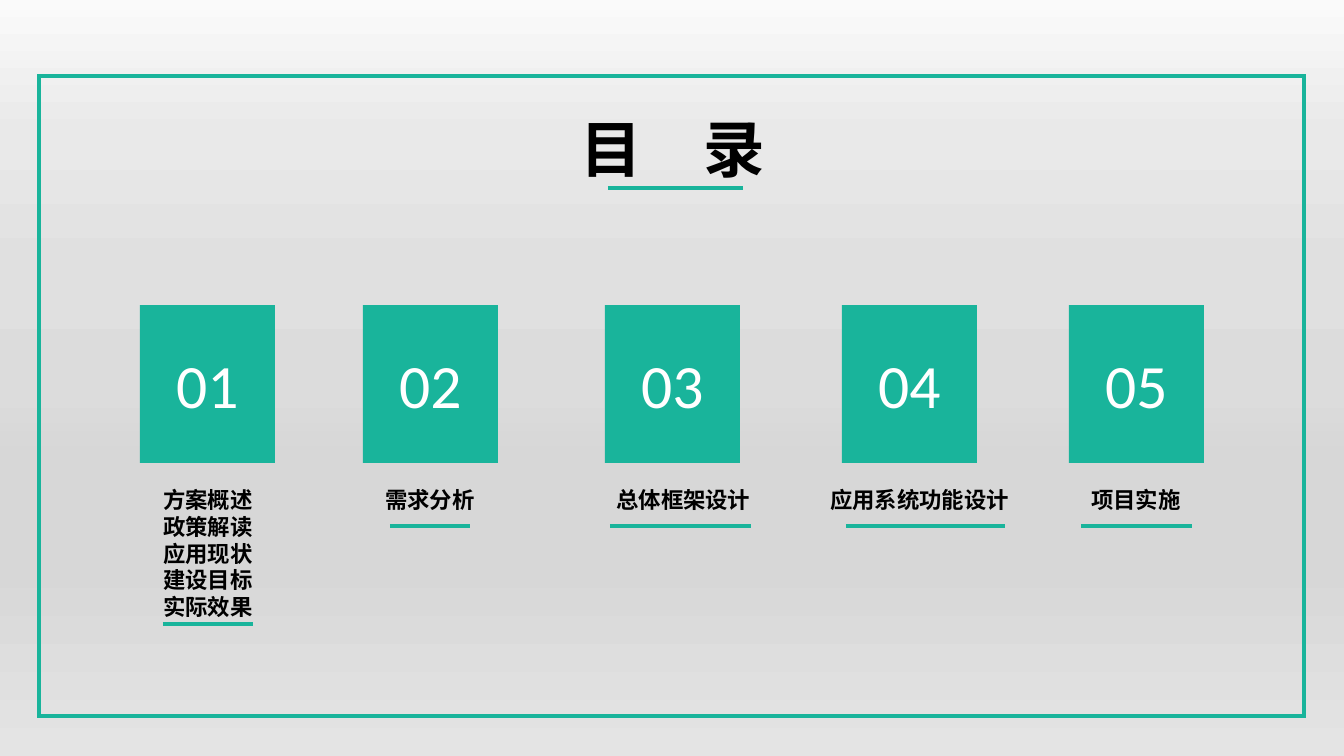
from pptx import Presentation
from pptx.dml.color import RGBColor
from pptx.enum.shapes import MSO_CONNECTOR, MSO_SHAPE
from pptx.enum.text import MSO_ANCHOR, MSO_AUTO_SIZE, PP_ALIGN
from pptx.oxml.ns import qn
from pptx.util import Pt
from lxml.etree import SubElement

EMU_PER_INCH = 914400
PX_PER_INCH = 100.8
FONT = "Calibri"
TEAL = RGBColor(0x19, 0xB4, 0x9B)
WHITE = RGBColor(0xFF, 0xFF, 0xFF)
BLACK = RGBColor(0x00, 0x00, 0x00)

BACKDROP = [
    (0, RGBColor(0xFA, 0xFA, 0xFA)),
    (18, RGBColor(0xE9, 0xE9, 0xE9)),
    (36, RGBColor(0xE0, 0xE0, 0xE0)),
    (51, RGBColor(0xDC, 0xDC, 0xDC)),
    (54, RGBColor(0xDA, 0xDA, 0xDA)),
    (56, RGBColor(0xD9, 0xD9, 0xD9)),
    (57, RGBColor(0xD8, 0xD8, 0xD8)),
    (59, RGBColor(0xD7, 0xD7, 0xD7)),
    (74, RGBColor(0xD7, 0xD7, 0xD7)),
    (100, RGBColor(0xE4, 0xE4, 0xE4)),
]

CHAPTERS = [
    (140, (152, 112), (163, 253, 624),
     ["方案概述", "政策解读", "应用现状", "建设目标", "实际效果"]),
    (363, (374, 112), (390, 470, 526), ["需求分析"]),
    (605, (605, 157), (610, 751, 526), ["总体框架设计"]),
    (842, (818, 203), (846, 1005, 526), ["应用系统功能设计"]),
    (1069, (1080, 112), (1081, 1192, 526), ["项目实施"]),
]


def px(*lengths):
    return [round(length * EMU_PER_INCH / PX_PER_INCH) for length in lengths]


def paint_backdrop(slide):
    fill = slide.background.fill
    fill.gradient()
    fill.gradient_angle = 270
    stops = next(slide.element.iter(qn("a:gsLst")))
    stops.clear()
    for percent, color in BACKDROP:
        stop = SubElement(stops, qn("a:gs"), pos=str(percent * 1000))
        SubElement(stop, qn("a:srgbClr"), val=str(color))


def write(frame, lines, size, color, bold=False):
    frame.text = "\n".join(lines)
    for paragraph in frame.paragraphs:
        paragraph.alignment = PP_ALIGN.CENTER
        paragraph.font.name = FONT
        paragraph.font.size = Pt(size)
        paragraph.font.bold = bold
        paragraph.font.color.rgb = color


def add_rectangle(slide, left, top, width, height):
    rectangle = slide.shapes.add_shape(
        MSO_SHAPE.RECTANGLE, *px(left, top, width, height))
    rectangle.shadow.inherit = False
    return rectangle


def add_border(slide):
    border = add_rectangle(slide, 39, 76, 1265, 640)
    border.fill.background()
    border.line.color.rgb = TEAL
    border.line.width = Pt(3)
    outline = border.element.spPr.find(qn("a:ln"))
    SubElement(outline, qn("a:miter"), lim="800000")


def add_number_card(slide, left, number):
    card = add_rectangle(slide, left, 305, 135, 158)
    card.fill.solid()
    card.fill.fore_color.rgb = TEAL
    card.line.fill.background()
    card.text_frame.vertical_anchor = MSO_ANCHOR.MIDDLE
    write(card.text_frame, [f"{number:02d}"], 44, WHITE)


def add_heading(slide, left, top, width, height, lines, size):
    heading = slide.shapes.add_textbox(*px(left, top, width, height))
    frame = heading.text_frame
    frame.word_wrap = False
    frame.auto_size = MSO_AUTO_SIZE.SHAPE_TO_FIT_TEXT
    write(frame, lines, size, BLACK, bold=True)


def add_underline(slide, start, end, y):
    underline = slide.shapes.add_connector(
        MSO_CONNECTOR.STRAIGHT, *px(start, y, end, y))
    underline.line.color.rgb = TEAL
    underline.line.width = Pt(3)
    SubElement(underline.element.spPr, qn("a:effectLst"))


def main():
    deck = Presentation()
    deck.slide_width, deck.slide_height = px(1344, 756)
    slide = deck.slides.add_slide(deck.slide_layouts[6])
    paint_backdrop(slide)
    add_border(slide)
    add_heading(slide, 563, 106, 220, 85, ["目　录"], 44)
    add_underline(slide, 608, 743, 188)
    for number, chapter in enumerate(CHAPTERS, start=1):
        card_left, (left, width), underline, topics = chapter
        add_number_card(slide, card_left, number)
        add_heading(slide, left, 481, width, 10 + 27 * len(topics), topics, 16)
        add_underline(slide, *underline)
    deck.save("out.pptx")


if __name__ == "__main__":
    main()
